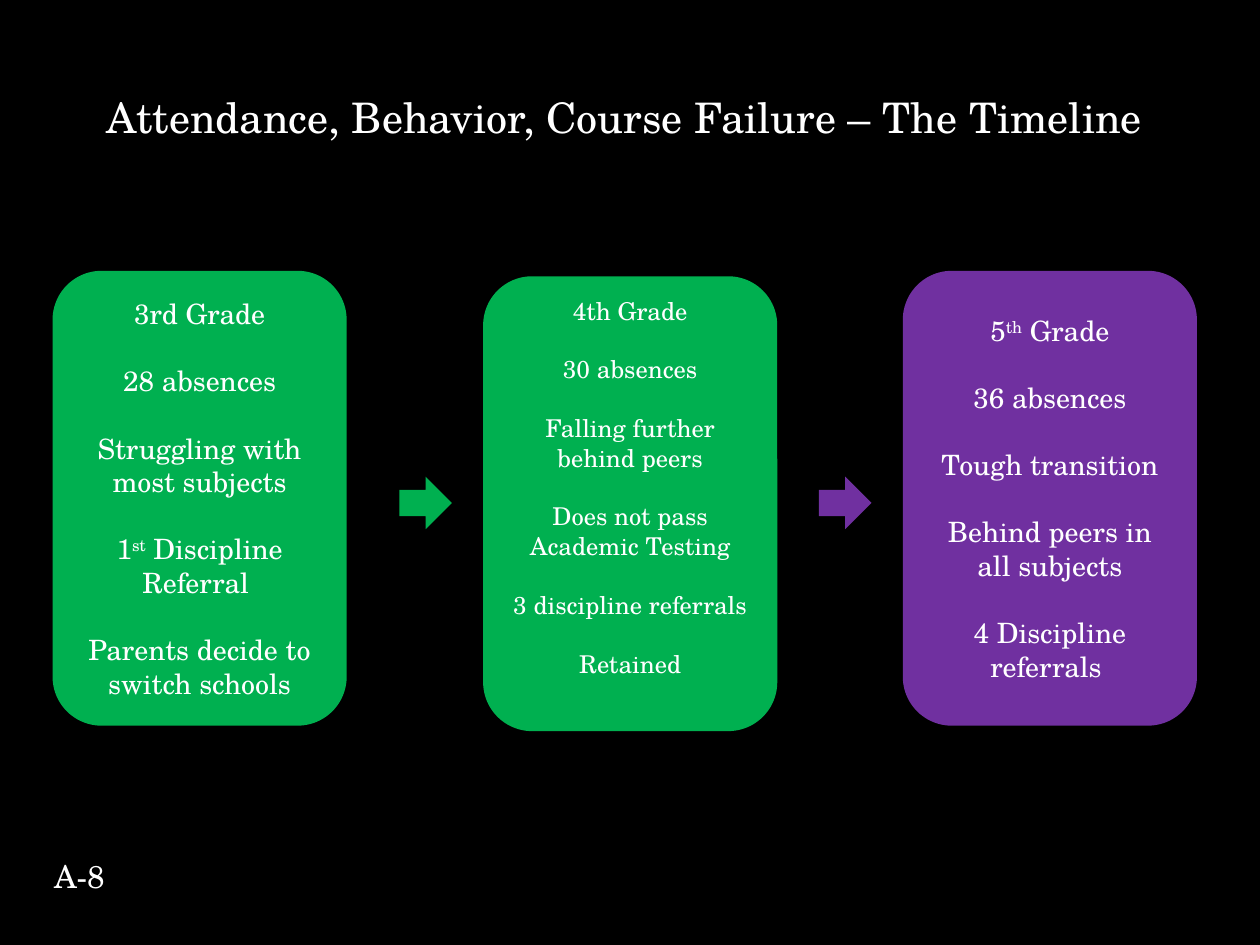
from pptx import Presentation
from pptx.dml.color import RGBColor
from pptx.enum import shapes, text
from pptx.util import Cm, Pt

FONT = "TeX Gyre Schola"
BLACK, WHITE, GREEN, PURPLE = "000000", "FFFFFF", "00B050", "7030A0"
CARD_WIDTH, CARD_HEIGHT = 5.93, 9.17
ARROW_SIZE, ARROW_TOP, ARROW_LEAD = 1.06, 9.61, 1.69

# left, top, colour, text size, extra bottom margin, lines (^ marks superscript)
GRADES = [
    (1.06, 5.46, GREEN, 16, 0,
     ["3rd Grade", "28 absences", "Struggling with most subjects",
      "1^st^ Discipline Referral ", "Parents decide to switch schools"]),
    (9.74, 5.57, GREEN, 14, 0.68,
     ["4th Grade", "30 absences", "Falling further behind peers",
      "Does not pass Academic Testing", "3 discipline referrals ", "Retained"]),
    (18.2, 5.46, PURPLE, 16, 0,
     ["5^th^ Grade", "36 absences", "Tough transition",
      "Behind peers in all subjects", "4 Discipline referrals "]),
]


def colour(value):
    return RGBColor.from_string(value)


def write(frame, lines, size=16, align=text.PP_ALIGN.CENTER, gap=0,
          anchor=text.MSO_ANCHOR.MIDDLE, wrap=True):
    """Write one paragraph per line; text between ^ marks is superscript."""
    frame.word_wrap = wrap
    frame.vertical_anchor = anchor
    for index, line in enumerate(lines):
        paragraph = frame.paragraphs[0] if index == 0 else frame.add_paragraph()
        paragraph.alignment = align
        paragraph.space_before = Pt(gap if index else 0)
        for part, words in enumerate(line.split("^")):
            run = paragraph.add_run()
            run.text = words
            run.font.name = FONT
            run.font.size = Pt(size)
            run.font.color.rgb = colour(WHITE)
            if part % 2:
                run.font._element.set("baseline", "30000")


def add_filled(slide, kind, left, top, width, height, fill):
    shape = slide.shapes.add_shape(kind, Cm(left), Cm(top), Cm(width), Cm(height))
    shape.shadow.inherit = False
    shape.fill.solid()
    shape.fill.fore_color.rgb = colour(fill)
    shape.line.fill.background()
    return shape


def add_title(slide, left, top, width, height):
    title = slide.shapes.title
    title.left, title.top = Cm(left), Cm(top)
    title.width, title.height = Cm(width), Cm(height)
    write(title.text_frame, ["Attendance, Behavior, Course Failure – The Timeline "], size=24)


def add_grade(slide, left, top, fill, size, extra_bottom, lines):
    card = add_filled(slide, shapes.MSO_SHAPE.ROUNDED_RECTANGLE,
                      left, top, CARD_WIDTH, CARD_HEIGHT, fill)
    card.text_frame.margin_bottom += Cm(extra_bottom)
    # The gap between entries is one line high
    write(card.text_frame, lines, size=size, gap=round(size * 1.2, 1))


def add_timeline(slide):
    for grade in GRADES:
        add_grade(slide, *grade)
    # Each arrow leads into the next card and takes its colour
    for left, _, fill, *_ in GRADES[1:]:
        add_filled(slide, shapes.MSO_SHAPE.RIGHT_ARROW, left - ARROW_LEAD,
                   ARROW_TOP, ARROW_SIZE, ARROW_SIZE, fill)


def add_page_label(slide, left, top, width, height):
    label = slide.shapes.add_textbox(Cm(left), Cm(top), Cm(width), Cm(height))
    write(label.text_frame, ["A-8"], size=18, align=text.PP_ALIGN.LEFT,
          anchor=text.MSO_ANCHOR.TOP, wrap=False)


def main():
    presentation = Presentation()
    presentation.slide_width, presentation.slide_height = Cm(25.4), Cm(19.05)
    slide = presentation.slides.add_slide(presentation.slide_layouts[5])
    slide.background.fill.solid()
    slide.background.fill.fore_color.rgb = colour(BLACK)

    add_title(slide, 1.27, 0.76, 22.86, 3.18)
    add_timeline(slide)
    add_page_label(slide, 0.84, 17.15, 1.7, 1.02)
    presentation.save("out.pptx")


if __name__ == "__main__":
    main()
